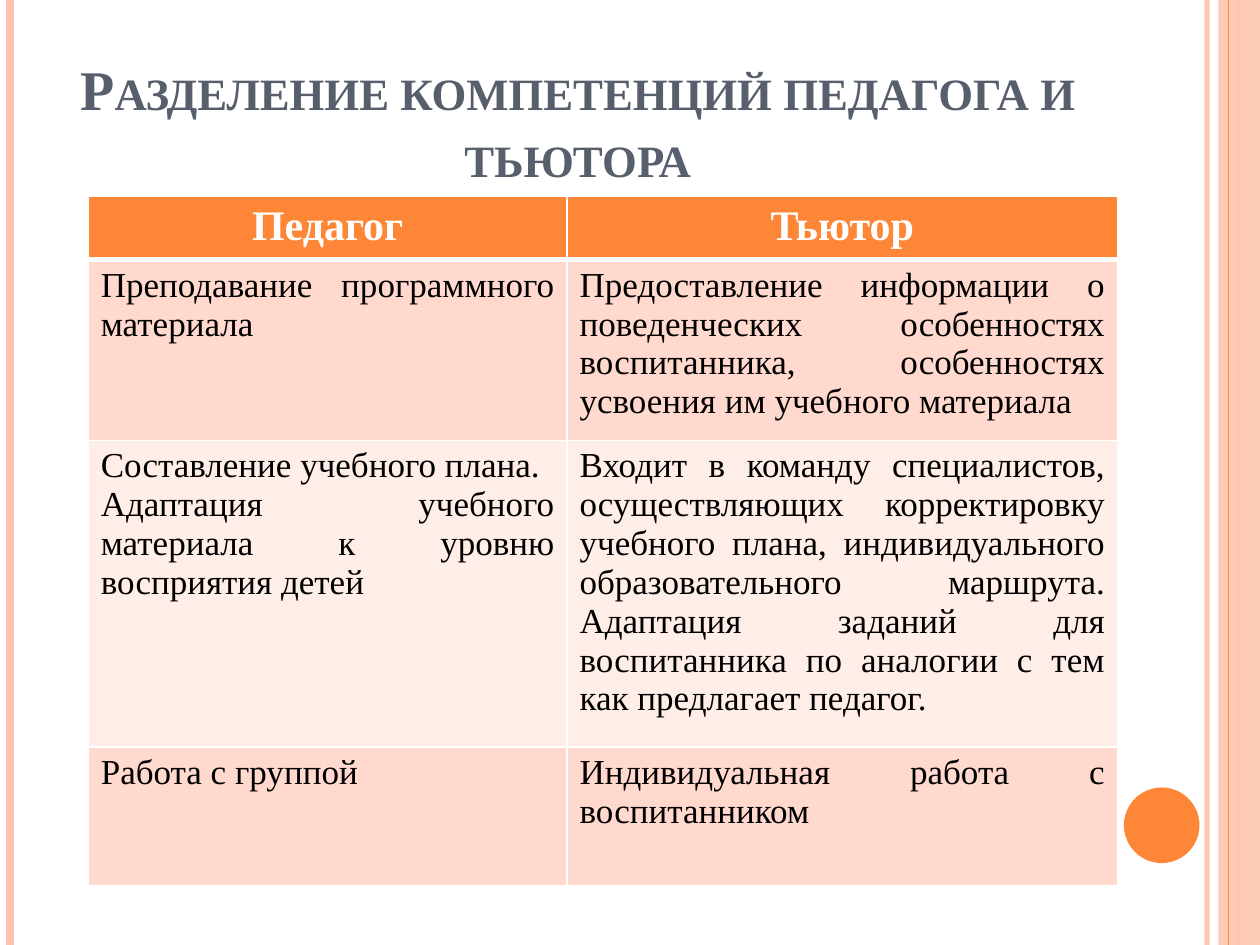
from lxml import etree
from pptx import Presentation
from pptx.dml.color import RGBColor
from pptx.enum.shapes import MSO_CONNECTOR, MSO_SHAPE
from pptx.enum.text import MSO_ANCHOR, PP_ALIGN
from pptx.oxml.ns import qn
from pptx.util import Inches, Pt

FONT = "Times New Roman"
WHITE = RGBColor(0xFF, 0xFF, 0xFF)
BLACK = RGBColor(0x00, 0x00, 0x00)
SLATE = RGBColor(0x57, 0x5F, 0x6D)
ORANGE = RGBColor(0xFE, 0x86, 0x37)
PEACH = RGBColor(0xFE, 0xC3, 0xAE)
BAND_DARK = RGBColor(0xFF, 0xD9, 0xCE)
BAND_LIGHT = RGBColor(0xFF, 0xED, 0xE8)

COL_WIDTHS = [3.8, 4.37]
ROW_HEIGHTS = [0.5, 1.43, 2.43, 1.1]
# Each cell is a list of paragraphs
ROWS = [
    [["Педагог"], ["Тьютор"]],
    [["Преподавание программного материала"],
     ["Предоставление информации о поведенческих особенностях воспитанника, "
      "особенностях усвоения им учебного материала"]],
    [["Составление учебного плана.",
      "Адаптация учебного материала к уровню восприятия детей"],
     ["Входит в команду специалистов, осуществляющих корректировку учебного "
      "плана, индивидуального образовательного маршрута. Адаптация заданий "
      "для воспитанника по аналогии с тем как предлагает педагог."]],
    [["Работа с группой"], ["Индивидуальная работа с воспитанником"]],
]


def set_alpha(fill_parent, percent):
    color = fill_parent.find(qn("a:solidFill"))[0]
    etree.SubElement(color, qn("a:alpha"), val=str(percent * 1000))


def add_stripe(slide, x, width, color, alpha=100):
    line = slide.shapes.add_connector(
        MSO_CONNECTOR.STRAIGHT, Inches(x), 0, Inches(x), Inches(7.5))
    line.line.color.rgb = color
    line.line.width = Pt(width)
    sp_pr = line._element.spPr
    if alpha < 100:
        set_alpha(sp_pr.find(qn("a:ln")), alpha)
    etree.SubElement(sp_pr, qn("a:effectLst"))


def add_block(slide, kind, x, y, w, h, color, alpha=100):
    s = slide.shapes.add_shape(kind, Inches(x), Inches(y), Inches(w), Inches(h))
    s.shadow.inherit = False
    s.fill.solid()
    s.fill.fore_color.rgb = color
    s.line.fill.background()
    if alpha < 100:
        set_alpha(s._element.spPr, alpha)


def add_run(p, text, size, color, bold, align):
    p.alignment = align
    r = p.add_run()
    r.text = text
    r.font.name = FONT
    r.font.size = Pt(size)
    r.font.bold = bold
    r.font.color.rgb = color
    return r


def add_title(slide, text):
    box = slide.shapes.add_textbox(
        Inches(0.5), Inches(0.3), Inches(8.17), Inches(1.25))
    tf = box.text_frame
    tf.word_wrap = True
    tf.vertical_anchor = MSO_ANCHOR.BOTTOM
    r = add_run(tf.paragraphs[0], text, 32, SLATE, True, PP_ALIGN.CENTER)
    r.font._element.set("cap", "small")


def set_borders(cell, top, bottom):
    tc_pr = cell._tc.get_or_add_tcPr()
    sides = [("L", 1), ("R", 1), ("T", top), ("B", bottom)]
    for i, (side, width) in enumerate(sides):
        ln = etree.Element(qn(f"a:ln{side}"), w=str(Pt(width)))
        fill = etree.SubElement(ln, qn("a:solidFill"))
        etree.SubElement(fill, qn("a:srgbClr"), val=str(WHITE))
        tc_pr.insert(i, ln)


def fill_cell(cell, paragraphs, row):
    header = row == 0
    cell.fill.solid()
    cell.fill.fore_color.rgb = (
        ORANGE if header else BAND_DARK if row % 2 else BAND_LIGHT)
    set_borders(cell, top=3 if row == 1 else 1, bottom=3 if header else 1)
    tf = cell.text_frame
    for i, text in enumerate(paragraphs):
        p = tf.add_paragraph() if i else tf.paragraphs[0]
        if header:
            add_run(p, text, 24, WHITE, True, PP_ALIGN.CENTER)
        else:
            add_run(p, text, 20, BLACK, False, PP_ALIGN.JUSTIFY)


def add_comparison_table(slide):
    table = slide.shapes.add_table(
        len(ROWS), len(COL_WIDTHS), Inches(0.7), Inches(1.56),
        Inches(sum(COL_WIDTHS)), Inches(sum(ROW_HEIGHTS))).table
    for col, width in zip(table.columns, COL_WIDTHS):
        col.width = Inches(width)
    for i, (height, cells) in enumerate(zip(ROW_HEIGHTS, ROWS)):
        table.rows[i].height = Inches(height)
        for j, paragraphs in enumerate(cells):
            fill_cell(table.cell(i, j), paragraphs, i)


def main():
    prs = Presentation()
    prs.slide_width, prs.slide_height = Inches(10), Inches(7.5)
    slide = prs.slides.add_slide(prs.slide_layouts[6])

    # Side stripes and accent circle
    add_stripe(slide, 9.58, 3, PEACH, alpha=93)
    add_stripe(slide, 0.08, 4.5, PEACH)
    add_stripe(slide, 9.83, 1.5, ORANGE, alpha=20)
    add_block(slide, MSO_SHAPE.RECTANGLE, 9.67, 0, 0.33, 7.5, PEACH, alpha=87)
    add_stripe(slide, 9.75, 0.75, ORANGE)
    add_block(slide, MSO_SHAPE.OVAL, 8.92, 6.25, 0.6, 0.6, ORANGE)

    # Title and table
    add_title(slide, "Разделение компетенций педагога и тьютора")
    add_comparison_table(slide)

    prs.save("out.pptx")


if __name__ == "__main__":
    main()
